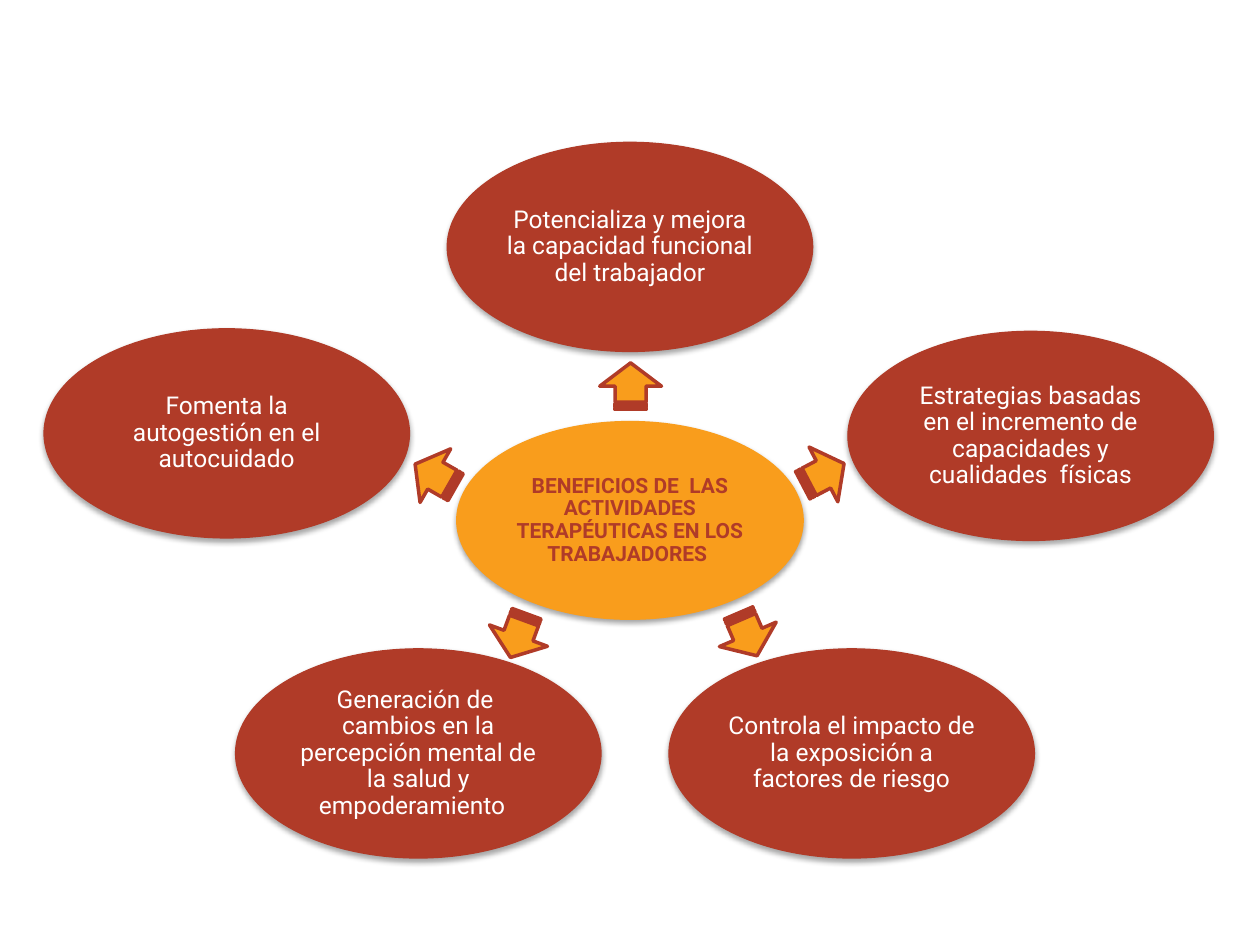
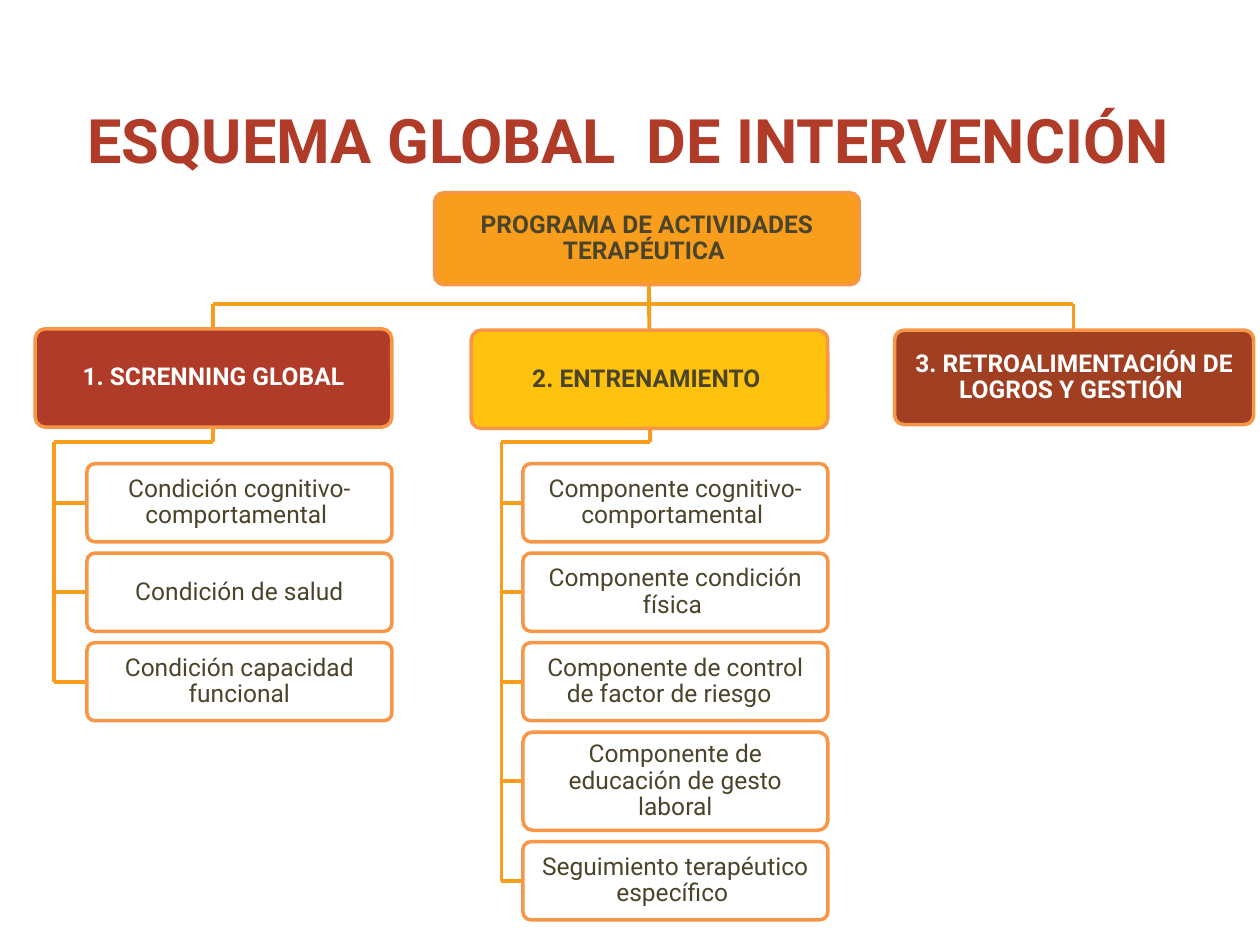
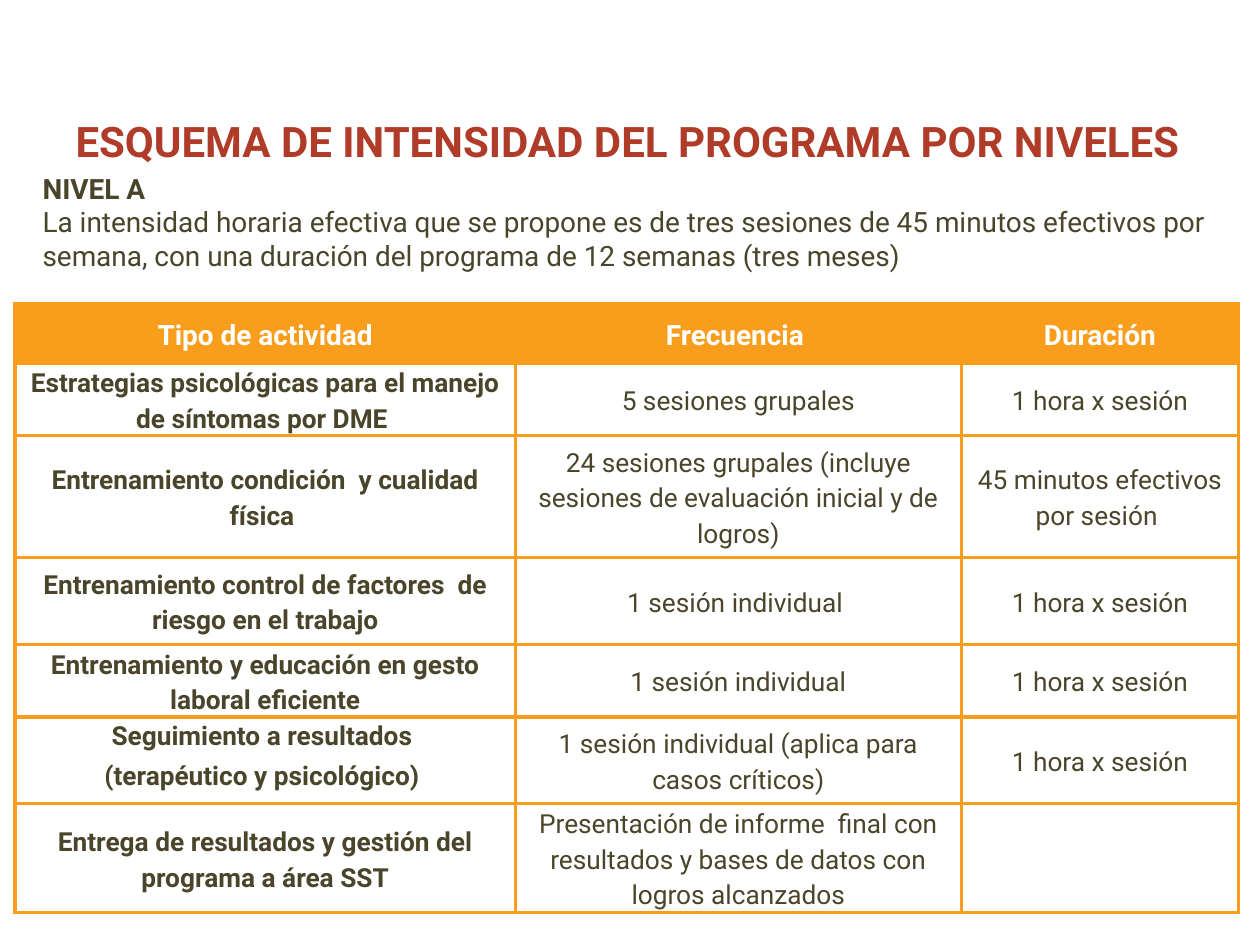
"""Builds three slides on a therapeutic activity programme for workers."""
import lxml.etree
import pptx
import pptx.dml.color
import pptx.enum.shapes
import pptx.enum.text
import pptx.oxml.ns
import pptx.util

Inches = pptx.util.Inches
Pt = pptx.util.Pt
qn = pptx.oxml.ns.qn
Kind = pptx.enum.shapes.MSO_SHAPE
Align = pptx.enum.text.PP_ALIGN
Anchor = pptx.enum.text.MSO_ANCHOR

FONT = "Roboto"
HUES = {
    "red": "B03B28", "brick": "A13F22", "orange": "F99D1C", "peach": "F79646",
    "gold": "FFC20E", "dark": "4A452A", "white": "FFFFFF", "black": "000000",
}


def hue(name):
    return pptx.dml.color.RGBColor.from_string(HUES[name])


def add(parent, tag, **attrs):
    return lxml.etree.SubElement(parent, qn(tag), attrs)


def write(frame, text, size=14, color="dark", bold=False, align=Align.CENTER,
          pitch=None, after=None):
    para = frame.add_paragraph() if frame.text else frame.paragraphs[0]
    para.alignment = align
    if pitch is not None:
        para.line_spacing = pitch
    if after is not None:
        para.space_after = Pt(after)
    run = para.add_run()
    run.text = text
    run.font.name = FONT
    run.font.size = Pt(size)
    run.font.bold = bold
    run.font.color.rgb = hue(color)


class Deck:
    def __init__(self):
        self.file = pptx.Presentation()
        self.file.slide_width = Inches(10)
        self.file.slide_height = Inches(7.5)
        self.slide = None

    def page(self, layout):
        self.slide = self.file.slides.add_slide(self.file.slide_layouts[layout])

    def blank(self):
        self.page(6)

    def titled(self, text, box, **style):
        self.page(5)
        title = self.slide.shapes.title
        title.left, title.top, title.width, title.height = map(Inches, box)
        frame = title.text_frame
        frame.word_wrap = True
        frame.auto_size = pptx.enum.text.MSO_AUTO_SIZE.NONE
        frame.vertical_anchor = Anchor.TOP
        write(frame, text, color="red", bold=True, **style)

    def note(self, box):
        frame = self.slide.shapes.add_textbox(*map(Inches, box)).text_frame
        frame.word_wrap = True
        return frame

    def shape(self, kind, box, fill, edge=None, width=2, turn=0):
        shape = self.slide.shapes.add_shape(kind, *map(Inches, box))
        shape.shadow.inherit = False
        shape.fill.solid()
        shape.fill.fore_color.rgb = hue(fill)
        if edge:
            shape.line.color.rgb = hue(edge)
            shape.line.width = Pt(width)
        else:
            shape.line.fill.background()
        shape.rotation = turn
        return shape

    def label(self, shape, text, side, top, **style):
        frame = shape.text_frame
        frame.word_wrap = True
        frame.vertical_anchor = Anchor.MIDDLE
        frame.margin_left = frame.margin_right = Inches(side)
        frame.margin_top = frame.margin_bottom = Inches(top)
        write(frame, text, pitch=0.9, **style)

    def oval(self, box, text, fill, edge=None, **style):
        shape = self.shape(Kind.OVAL, box, fill, edge, 0.75)
        effects = shape._element.spPr.find(qn("a:effectLst"))
        shade = add(effects, "a:outerShdw", blurRad=str(Pt(3.1)), dist=str(Pt(1.8)),
                    dir="5400000", rotWithShape="0")
        tone = add(shade, "a:srgbClr", val=HUES["black"])
        add(tone, "a:alpha", val="35000")
        self.label(shape, text, 0.02, 0.02, **style)

    def card(self, box, text, fill="white", **style):
        shape = self.shape(Kind.ROUNDED_RECTANGLE, box, fill, "peach")
        shape.adjustments[0] = 0.1
        self.label(shape, text, 0.08, 0.04, **style)

    def line(self, *ends):
        line = self.slide.shapes.add_connector(
            pptx.enum.shapes.MSO_CONNECTOR.STRAIGHT, *map(Inches, ends))
        line.line.color.rgb = hue("orange")
        line.line.width = Pt(2.25)
        add(line._element.spPr, "a:effectLst")

    def cell(self, cell, text, fill, pitch=1.15, **style):
        props = cell._tc.get_or_add_tcPr()
        for side in "LRTB":
            edge = add(props, f"a:ln{side}", w=str(Pt(2.25)))
            add(add(edge, "a:solidFill"), "a:srgbClr", val=HUES["orange"])
        cell.fill.solid()
        cell.fill.fore_color.rgb = hue(fill)
        cell.vertical_anchor = Anchor.MIDDLE
        cell.margin_left = cell.margin_right = Inches(0.07)
        cell.margin_top = cell.margin_bottom = 0
        for part in text.splitlines():
            write(cell.text_frame, part, pitch=pitch, after=10, **style)

    def table(self, left, top, widths, heights, rows):
        box = left, top, sum(widths), sum(heights)
        grid = self.slide.shapes.add_table(
            len(rows), len(widths), *map(Inches, box)).table
        for col, width in zip(grid.columns, widths):
            col.width = Inches(width)
        for r, (row, height) in enumerate(zip(rows, heights)):
            grid.rows[r].height = Inches(height)
            for c, text in enumerate(row):
                if r == 0:
                    look = dict(fill="orange", size=16, color="white", bold=True)
                else:
                    look = dict(fill="white", size=15, bold=c == 0)
                if "\n" in text:
                    look["pitch"] = Pt(13)
                self.cell(grid.cell(r, c), text, **look)


def gains(deck):
    deck.blank()
    ovals = [
        (3.55, 1.13, "Potencializa y mejora la capacidad funcional del trabajador"),
        (0.35, 2.61, "Fomenta la autogestión en el autocuidado"),
        (6.73, 2.63, "Estrategias basadas en el incremento de capacidades y "
                     "cualidades  físicas"),
        (1.87, 5.15, "Generación de  cambios en la percepción mental de la salud y "
                     "empoderamiento  "),
        (5.31, 5.15, "Controla el impacto de la exposición a factores de riesgo"),
    ]
    for left, top, text in ovals:
        deck.oval((left, top, 2.9, 1.66), text, "red", "red", color="white")
    deck.oval((3.62, 3.34, 2.76, 1.58),
              "BENEFICIOS DE  LAS ACTIVIDADES TERAPÉUTICAS EN LOS TRABAJADORES ",
              "orange", size=12, color="red", bold=True)
    arrows = [(6.35, 3.52, 332.3), (3.27, 3.53, 209.7), (4.82, 2.82, 270),
              (5.75, 4.79, 66.7), (3.93, 4.8, 110.2)]
    for left, top, turn in arrows:
        deck.shape(Kind.STRIPED_RIGHT_ARROW, (left, top, 0.37, 0.49),
                   "orange", "red", turn=turn)


def branch(deck, stem, left, mid, leaves):
    top, start, gap, reach = 3.68, 3.51, 0.09, 1.26
    deck.line(stem, start, mid, start)
    for text, height in leaves:
        centre = top + height / 2
        deck.line(stem, centre, stem + reach, centre)
        deck.card((left, top, 2.42, height), text)
        top += height + gap
    deck.line(stem, start, stem, centre)


def scheme(deck):
    deck.titled("ESQUEMA GLOBAL  DE INTERVENCIÓN", (0, 0.76, 9.98, 0.69), size=35)
    rail, first, mid, last = 2.41, 1.69, 5.16, 8.52
    deck.line(5.15, 2.18, mid, 3.51)
    deck.line(first, rail, first, 3.51)
    deck.line(last, rail, last, 3.35)
    deck.line(first, rail, last, rail)
    deck.card((3.45, 1.53, 3.37, 0.73), "PROGRAMA DE ACTIVIDADES TERAPÉUTICA ",
              "orange", bold=True)
    branch(deck, 0.43, 0.69, first, [
        ("Condición cognitivo- comportamental ", 0.62),
        (" Condición de salud ", 0.62),
        ("Condición capacidad funcional", 0.62),
    ])
    branch(deck, 3.98, 4.15, mid, [
        ("Componente cognitivo- comportamental ", 0.62),
        ("Componente condición física ", 0.62),
        ("Componente de control de factor de riesgo  ", 0.62),
        ("Componente de educación de gesto laboral", 0.78),
        ("Seguimiento terapéutico específico ", 0.62),
    ])
    heads = [
        ((0.28, 2.61, 2.83, 0.78), "1. SCRENNING GLOBAL", "red", "white"),
        ((3.74, 2.62, 2.83, 0.78), "2. ENTRENAMIENTO ", "gold", "dark"),
        ((7.1, 2.62, 2.85, 0.75), "3. RETROALIMENTACIÓN DE LOGROS Y GESTIÓN ",
         "brick", "white"),
    ]
    for box, text, fill, color in heads:
        deck.card(box, text, fill, color=color, bold=True)


def levels(deck):
    deck.titled("ESQUEMA DE INTENSIDAD DEL PROGRAMA POR NIVELES",
                (0.04, 0.68, 9.88, 0.62), size=24, pitch=Pt(42))
    frame = deck.note((0.24, 1.31, 9.56, 0.91))
    write(frame, "NIVEL A", size=16, bold=True, align=Align.LEFT)
    write(frame, "La intensidad horaria efectiva que se propone es de tres sesiones de "
          "45 minutos efectivos por semana, con una duración del programa de 12 semanas "
          "(tres meses)", size=16, align=Align.LEFT)
    hour = "1 hora x sesión"
    rows = [
        ("Tipo de actividad", "Frecuencia ", "Duración"),
        ("Estrategias psicológicas para el manejo de síntomas por DME ",
         "5 sesiones grupales", hour),
        ("Entrenamiento condición  y cualidad física ",
         "24 sesiones grupales (incluye sesiones de evaluación inicial y de logros)",
         "45 minutos efectivos por sesión "),
        ("Entrenamiento control de factores  de riesgo en el trabajo",
         "1 sesión individual ", hour),
        ("Entrenamiento y educación en gesto laboral eficiente",
         "1 sesión individual", hour),
        ("Seguimiento a resultados \n(terapéutico y psicológico) ",
         "1 sesión individual (aplica para casos críticos)", hour),
        ("Entrega de resultados y gestión del programa a área SST",
         "Presentación de informe  final con resultados y bases de datos con "
         "logros alcanzados", ""),
    ]
    deck.table(0.12, 2.41, (3.97, 3.54, 2.2),
               (0.47, 0.56, 0.97, 0.69, 0.56, 0.69, 0.84), rows)


def main():
    deck = Deck()
    gains(deck)
    scheme(deck)
    levels(deck)
    deck.file.save("out.pptx")


if __name__ == "__main__":
    main()
